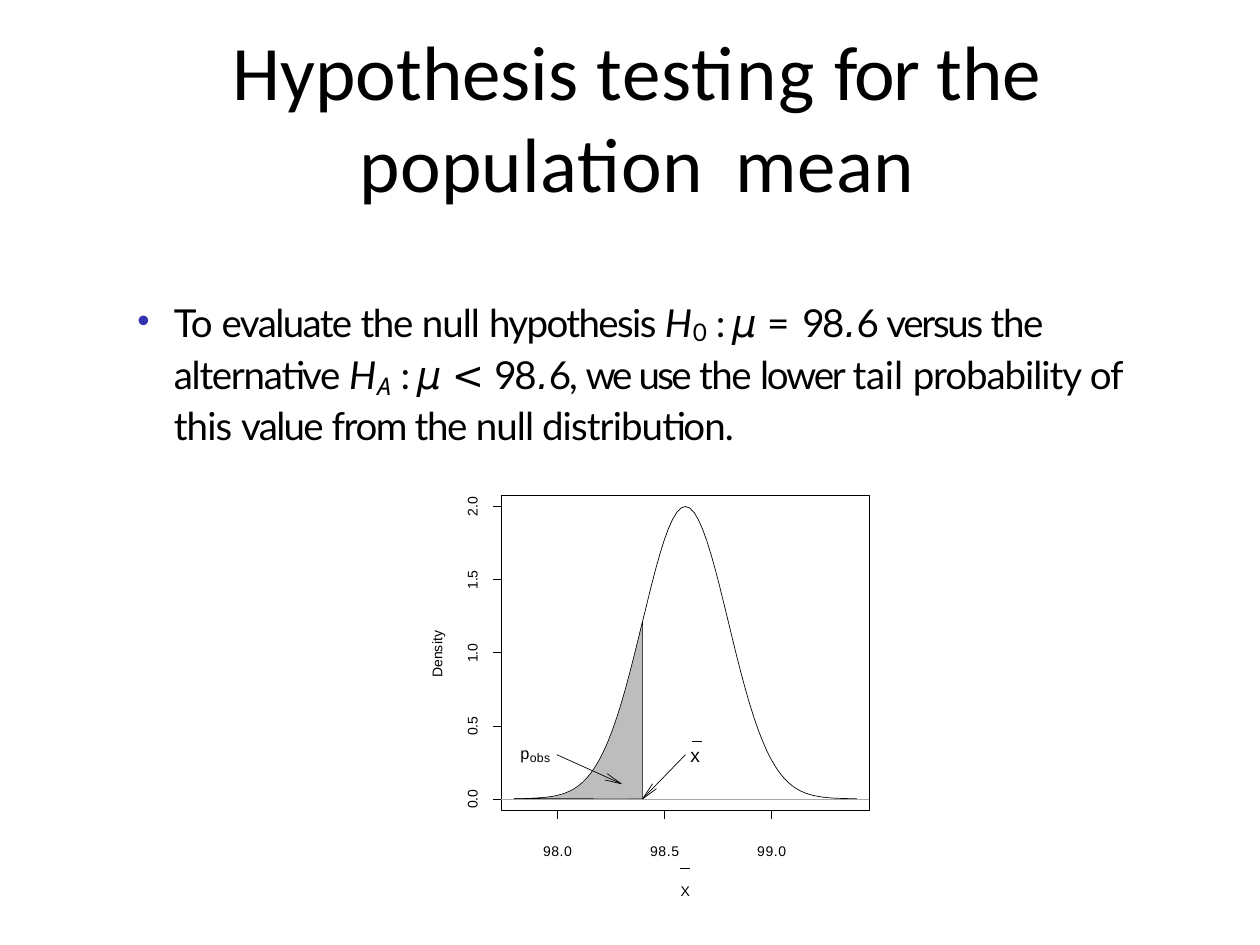
from dataclasses import dataclass, field
from math import exp

from lxml.etree import SubElement
from pptx import Presentation
from pptx.dml.color import RGBColor
from pptx.enum.shapes import MSO_CONNECTOR, MSO_SHAPE
from pptx.enum.text import MSO_ANCHOR, MSO_AUTO_SIZE, PP_ALIGN
from pptx.oxml.ns import qn
from pptx.util import Inches, Pt

BLACK, GRAY, TAIL, BULLET = "000000", "A9A9A9", "BDBDBD", "3333B2"
THIN, MEDIUM = 0.25, 0.41
MEAN_X, SIGMA, BASE_Y, PEAK = 5.44, 0.34, 6.34, 2.32
LEFT, TOP, RIGHT, BOTTOM = 3.98, 3.93, 6.9, 6.43
TICK = 0.07
TICKS_X = [4.42 + 0.85 * i for i in range(3)]


@dataclass
class Para:
    runs: list[tuple[str, dict]]
    fmt: dict = field(default_factory=dict)
    margin: float = 0
    indent: float = 0
    bullet: str = ""
    tabs: tuple[float, ...] = ()


@dataclass
class Box:
    at: tuple[float, float, float, float]
    paras: list[Para]
    font: dict
    inset_top: float = 0
    anchor: MSO_ANCHOR = MSO_ANCHOR.TOP
    vertical: bool = False


def rgb(value: str) -> RGBColor:
    return RGBColor.from_string(value)


def set_attrs(target, values: dict) -> None:
    for name, value in values.items():
        setattr(target, name, value)


def add_run(p, text: str, fmt: dict) -> None:
    r = p.add_run()
    r.text = text
    r.font.color.rgb = rgb(BLACK)
    rPr = r.font._element
    for name, value in fmt.items():
        if name == "spc":
            rPr.set("spc", str(round(value * 100)))
        elif name == "base":
            rPr.set("baseline", str(value * 1000))
        else:
            setattr(r.font, name, Pt(value) if name == "size" else value)


def fill_para(p, para: Para, font: dict) -> None:
    set_attrs(p, para.fmt)
    pPr = p._p.get_or_add_pPr()
    for name, value in (("marL", para.margin), ("indent", para.indent)):
        if value:
            pPr.set(name, str(Inches(value)))
    if para.bullet:
        SubElement(SubElement(pPr, qn("a:buClr")), qn("a:srgbClr"), val=BULLET)
        SubElement(pPr, qn("a:buSzPct"), val="91000")
        SubElement(pPr, qn("a:buFont"), typeface="Arial")
        SubElement(pPr, qn("a:buChar"), char=para.bullet)
    if para.tabs:
        tabs = SubElement(pPr, qn("a:tabLst"))
        for pos in para.tabs:
            SubElement(tabs, qn("a:tab"), pos=str(Inches(pos)), algn="l")
    current = dict(font)
    for text, change in para.runs:
        current.update(change)
        add_run(p, text, current)


def add_text(s, box: Box) -> None:
    tf = s.shapes.add_textbox(*map(Inches, box.at)).text_frame
    set_attrs(tf, dict(word_wrap=True, auto_size=MSO_AUTO_SIZE.SHAPE_TO_FIT_TEXT,
                       vertical_anchor=box.anchor, margin_left=0, margin_right=0,
                       margin_top=Inches(box.inset_top), margin_bottom=0))
    if box.vertical:
        tf._txBody.bodyPr.set("vert", "vert270")
    for i, para in enumerate(box.paras):
        fill_para(tf.add_paragraph() if i else tf.paragraphs[0], para, box.font)


def style(sp, fill: str = "", width: float = 0) -> None:
    sp.shadow.inherit = False
    if fill:
        sp.fill.solid()
        sp.fill.fore_color.rgb = rgb(fill)
    else:
        sp.fill.background()
    if width:
        sp.line.color.rgb = rgb(BLACK)
        sp.line.width = Pt(width)
    else:
        sp.line.fill.background()


def add_path(s, points: list, close: bool = False, fill: str = "", width: float = 0) -> None:
    pts = [(Inches(x), Inches(y)) for x, y in points]
    fb = s.shapes.build_freeform(*pts[0])
    fb.add_line_segments(pts[1:], close=close)
    style(fb.convert_to_shape(), fill, width)


def add_line(s, x1: float, y1: float, x2: float, y2: float, color: str = BLACK, width: float = THIN):
    c = s.shapes.add_connector(MSO_CONNECTOR.STRAIGHT, *map(Inches, (x1, y1, x2, y2)))
    c.line.color.rgb = rgb(color)
    c.line.width = Pt(width)
    SubElement(c._element.spPr, qn("a:effectLst"))
    return c


def bell(first: float, last: float) -> list[tuple[float, float]]:
    steps = round((last - first) * 10)
    zs = [first + i / 10 for i in range(steps + 1)]
    return [(MEAN_X + SIGMA * z, BASE_Y - PEAK * exp(-z * z / 2)) for z in zs]


def add_arrow(s, start: tuple, barbs: tuple, tip: tuple) -> None:
    add_line(s, *start, *tip, width=MEDIUM)
    add_path(s, [barbs[0], tip, barbs[1]], width=MEDIUM)


def add_axis_label(s, text: str, left: float, middle: float, length: float) -> None:
    para = Para([(text, {})], dict(space_before=Pt(1.1)), margin=0.03)
    add_text(s, Box((left, middle - length / 2, 0.13, length), [para],
                    dict(name="Arial", size=8), inset_top=0.02, vertical=True))


def add_plot(s) -> None:
    add_path(s, bell(-4, 4), width=MEDIUM)
    frame = s.shapes.add_shape(MSO_SHAPE.RECTANGLE, *map(Inches, (LEFT, TOP, RIGHT - LEFT, BOTTOM - TOP)))
    style(frame, width=THIN)
    add_line(s, TICKS_X[0], BOTTOM, TICKS_X[-1], BOTTOM)
    for x in TICKS_X:
        add_line(s, x, BOTTOM, x, BOTTOM + TICK)
    add_line(s, LEFT, BASE_Y, LEFT, BASE_Y - PEAK)
    for i in range(5):
        y = BASE_Y - PEAK * i / 4
        tick = add_line(s, LEFT, y, LEFT - TICK, y)
        if i == 2:
            tick.begin_connect(frame, 1)
        add_axis_label(s, f"{i / 2:.1f}", 3.68, y, 0.22)
    add_axis_label(s, "Density", 3.4, 5.18, 0.46)
    add_line(s, LEFT, BASE_Y, RIGHT, BASE_Y, GRAY)
    tail = bell(-4, -1) + [(MEAN_X - SIGMA, BASE_Y)]
    add_path(s, tail, close=True, fill=TAIL)
    add_path(s, tail, close=True, width=THIN)
    add_arrow(s, (5.44, 5.99), ((5.18, 6.22), (5.21, 6.26)), (5.1, 6.34))
    add_arrow(s, (4.42, 5.99), ((4.8, 6.19), (4.82, 6.14)), (4.93, 6.22))
    for x, y in ((5.4, 6.89), (5.49, 5.88)):
        add_line(s, x, y, x + 0.08, y)


def font(spc: float, **changes) -> dict:
    return dict(spc=spc, **changes)


MU = font(-1, name="DejaVu Sans", italic=True)
COLON = font(-1.8, name="Lato", size=22, base=0, italic=False)
POINT, UPRIGHT = dict(name="DejaVu Sans", italic=True), dict(name="Lato", italic=False)

TITLE = Para([("Hypothesis ", {}), ("testing ", font(0.5)), ("for ", font(-0.8)), ("the ", font(0)),
              ("population", font(0.2)), (" ", font(8)), ("mean", font(0.3))],
             dict(alignment=PP_ALIGN.CENTER), margin=0.11)
BODY = Para([
    ("To ", font(-0.5)), ("evaluate ", font(-0.9)), ("the ", font(-0.8)), ("null ", font(-0.5)),
    ("hypothesis ", font(-0.9)), ("H", font(0.5, italic=True)),
    ("0 ", font(0.7, size=24, italic=False, base=-10)), (": ", COLON), ("µ ", MU),
    ("= ", font(0.9, **UPRIGHT)), ("98", font(-1.4)), (".", POINT), ("6 ", UPRIGHT),
    ("versus ", font(-1.3)), ("the ", font(-0.8)), ("alternative ", font(-0.7)),
    ("H", font(0.6, italic=True)), ("A ", font(0.9, size=24, name="Noto Sans", base=-14)),
    (": ", COLON), ("µ ", MU), ("< ", font(-1.1)), ("98", font(-1.2, **UPRIGHT)), (".", POINT),
    ("6, ", UPRIGHT), ("we ", font(-2)), ("use ", font(-1.5)), ("the ", font(-0.8)),
    ("lower ", font(-1.3)), ("tail ", font(-0.1)), ("probability ", font(-0.6)), ("of ", font(-0.7)),
    ("this ", font(-0.5)), ("value ", font(-1)), ("from the ", font(-0.8)),
    ("null distribution.", font(-0.5)),
], dict(line_spacing=1.03), 0.31, -0.29, "•", (0.31,))
PLOT_LABELS = [
    Para([("\tp", font(0.3, size=16, base=10)), ("obs", font(0.2, size=7, base=0)),
          ("\t", dict(size=11)), ("x", font(-0.1))], tabs=(0.15, 1.5)),
    Para([("\t98.0\t98.5\t99.0", font(0.3))], dict(space_before=Pt(42.8)),
         tabs=tuple(x - LEFT - 0.11 for x in TICKS_X)),
    Para([("X", font(0.5))], dict(space_before=Pt(12.85), alignment=PP_ALIGN.CENTER)),
]


def main() -> None:
    prs = Presentation()
    set_attrs(prs, dict(slide_width=Inches(10), slide_height=Inches(7.5)))
    s = prs.slides.add_slide(prs.slide_layouts[6])
    add_text(s, Box((0.5, 0.18, 9, 1.48), [TITLE], dict(name="Calibri", size=44), anchor=MSO_ANCHOR.MIDDLE))
    add_text(s, Box((1.07, 2.33, 8.02, 1.16), [BODY], dict(name="Lato", size=22)))
    add_plot(s)
    add_text(s, Box((3.98, 5.83, 2.92, 1.23), PLOT_LABELS, dict(name="Arial", size=8)))
    prs.save("out.pptx")


if __name__ == "__main__":
    main()
